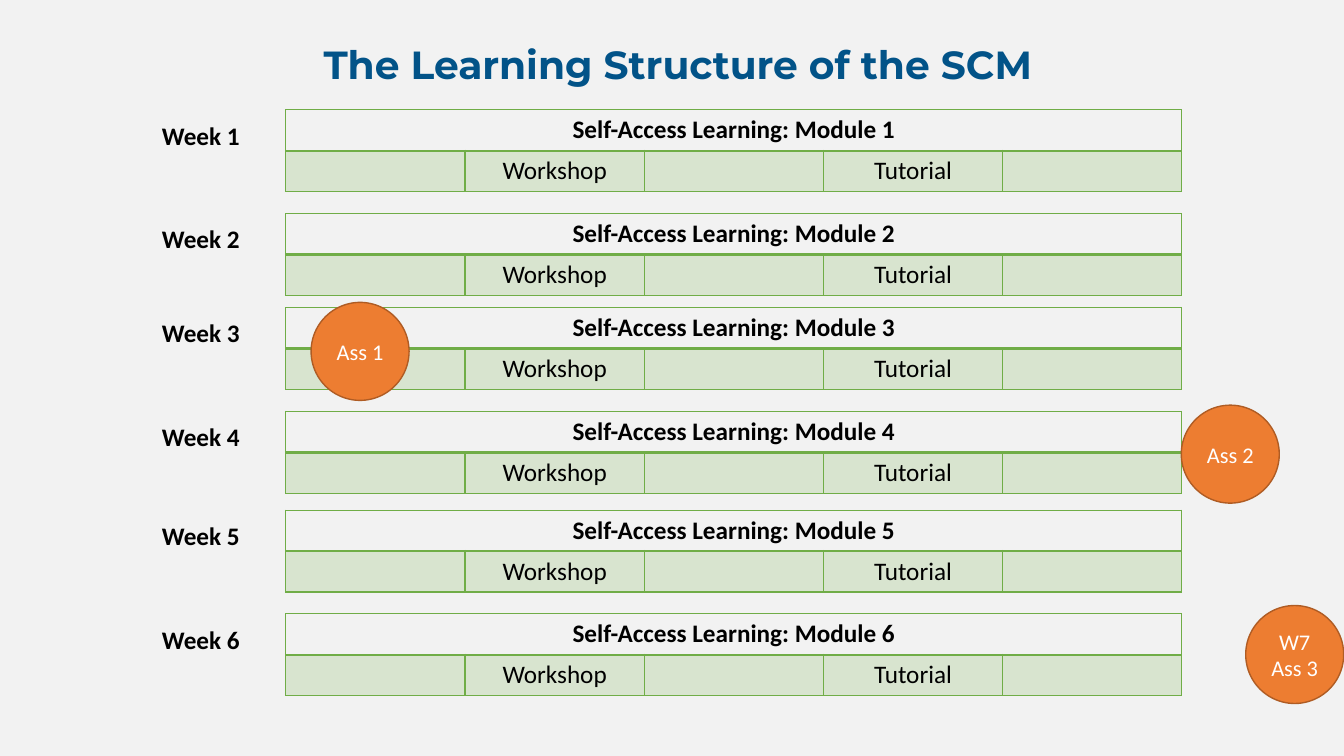
from dataclasses import dataclass

from lxml.etree import SubElement
from pptx import Presentation
from pptx.dml.color import RGBColor
from pptx.enum.shapes import MSO_SHAPE
from pptx.enum.text import MSO_ANCHOR, MSO_AUTO_SIZE, PP_ALIGN
from pptx.oxml.ns import qn
from pptx.util import Pt


@dataclass(frozen=True)
class Theme:
    background: str = "F2F2F2"
    heading: str = "025388"
    ink: str = "000000"
    green: str = "70AD47"
    orange: str = "ED7D31"
    orange_edge: str = "AF5C24"
    white: str = "FFFFFF"
    heading_font: str = "Montserrat"
    body_font: str = "Calibri"
    heading_size: float = 28
    body_size: float = 18
    badge_size: float = 16


THEME = Theme()
DAYS = ["", "Workshop", "", "Tutorial", ""]
WEEK_TOPS = [78.5, 152.6, 219.7, 293.9, 364.5, 438.5]
ASSESSMENTS = [
    ("Ass 1", 222.2, 216),
    ("Ass 2", 843.8, 289.4),
    ("W7\nAss 3", 889.8, 432.5),
]


def rgb(value):
    return RGBColor.from_string(value)


def write(frame, text, size=THEME.body_size, font=THEME.body_font,
          color=THEME.ink, bold=False, align=PP_ALIGN.CENTER, spacing=None):
    for index, line in enumerate(text.split("\n")):
        paragraph = frame.add_paragraph() if index else frame.paragraphs[0]
        paragraph.alignment = align
        if spacing:
            paragraph.line_spacing = spacing
        run = paragraph.add_run()
        run.text = line
        run.font.size = Pt(size)
        run.font.name = font
        run.font.bold = bold
        run.font.color.rgb = rgb(color)


def add_heading(slide, left, top, width, height):
    heading = slide.shapes.title
    heading.left, heading.top = Pt(left), Pt(top)
    heading.width, heading.height = Pt(width), Pt(height)
    frame = heading.text_frame
    frame.word_wrap = True
    frame.auto_size = MSO_AUTO_SIZE.NONE
    frame.vertical_anchor = MSO_ANCHOR.MIDDLE
    write(frame, "The Learning Structure of the SCM",
          size=THEME.heading_size, font=THEME.heading_font,
          color=THEME.heading, bold=True, align=PP_ALIGN.LEFT, spacing=0.9)


def set_borders(cell, bottom=1):
    properties = cell._tc.get_or_add_tcPr()
    for side, weight in (("L", 1), ("R", 1), ("T", 1), ("B", bottom)):
        border = SubElement(properties, qn(f"a:ln{side}"), w=str(Pt(weight)))
        fill = SubElement(border, qn("a:solidFill"))
        SubElement(fill, qn("a:srgbClr"), val=THEME.green)


def tint(cell):
    cell.fill.solid()
    cell.fill.fore_color.rgb = rgb(THEME.green)
    color = cell._tc.tcPr.find(qn("a:solidFill")).find(qn("a:srgbClr"))
    SubElement(color, qn("a:alpha"), val="20000")


def add_timetable(slide, week, left, top, width, height):
    timetable = slide.shapes.add_table(
        2, len(DAYS), Pt(left), Pt(top), Pt(width), Pt(height)).table
    timetable.first_row = False
    timetable.horz_banding = False
    for column in timetable.columns:
        column.width = Pt(width / len(DAYS))
    for row in timetable.rows:
        row.height = Pt(height / 2)
    for column, activity in enumerate(DAYS):
        module, day = timetable.cell(0, column), timetable.cell(1, column)
        set_borders(module, bottom=2)
        module.fill.background()
        set_borders(day)
        tint(day)
        if activity:
            write(day.text_frame, activity)
    module = timetable.cell(0, 0)
    module.merge(timetable.cell(0, len(DAYS) - 1))
    write(module.text_frame, f"Self-Access Learning: Module {week}", bold=True)


def add_week(slide, week, left, top, width, height):
    label = slide.shapes.add_textbox(Pt(left), Pt(top + 3.6), Pt(75), Pt(29))
    label.text_frame.word_wrap = False
    label.text_frame.auto_size = MSO_AUTO_SIZE.SHAPE_TO_FIT_TEXT
    write(label.text_frame, f"Week {week} ", bold=True)
    indent = 96.2
    add_timetable(slide, week, left + indent, top, width - indent, height)


def add_assessment(slide, text, left, top, diameter):
    badge = slide.shapes.add_shape(
        MSO_SHAPE.OVAL, Pt(left), Pt(top), Pt(diameter), Pt(diameter))
    badge.shadow.inherit = False
    badge.fill.solid()
    badge.fill.fore_color.rgb = rgb(THEME.orange)
    badge.line.color.rgb = rgb(THEME.orange_edge)
    badge.line.width = Pt(1)
    badge.text_frame.word_wrap = True
    badge.text_frame.vertical_anchor = MSO_ANCHOR.MIDDLE
    write(badge.text_frame, text, size=THEME.badge_size, color=THEME.white)


def main():
    presentation = Presentation()
    presentation.slide_width, presentation.slide_height = Pt(960), Pt(540)
    slide = presentation.slides.add_slide(presentation.slide_layouts[5])
    slide.background.fill.solid()
    slide.background.fill.fore_color.rgb = rgb(THEME.background)
    add_heading(slide, 223.9, 26, 654.5, 43)
    for week, top in enumerate(WEEK_TOPS, start=1):
        add_week(slide, week, 108, top, 736.2, 58.4)
    for text, left, top in ASSESSMENTS:
        add_assessment(slide, text, left, top, 70)
    presentation.save("out.pptx")


if __name__ == "__main__":
    main()
